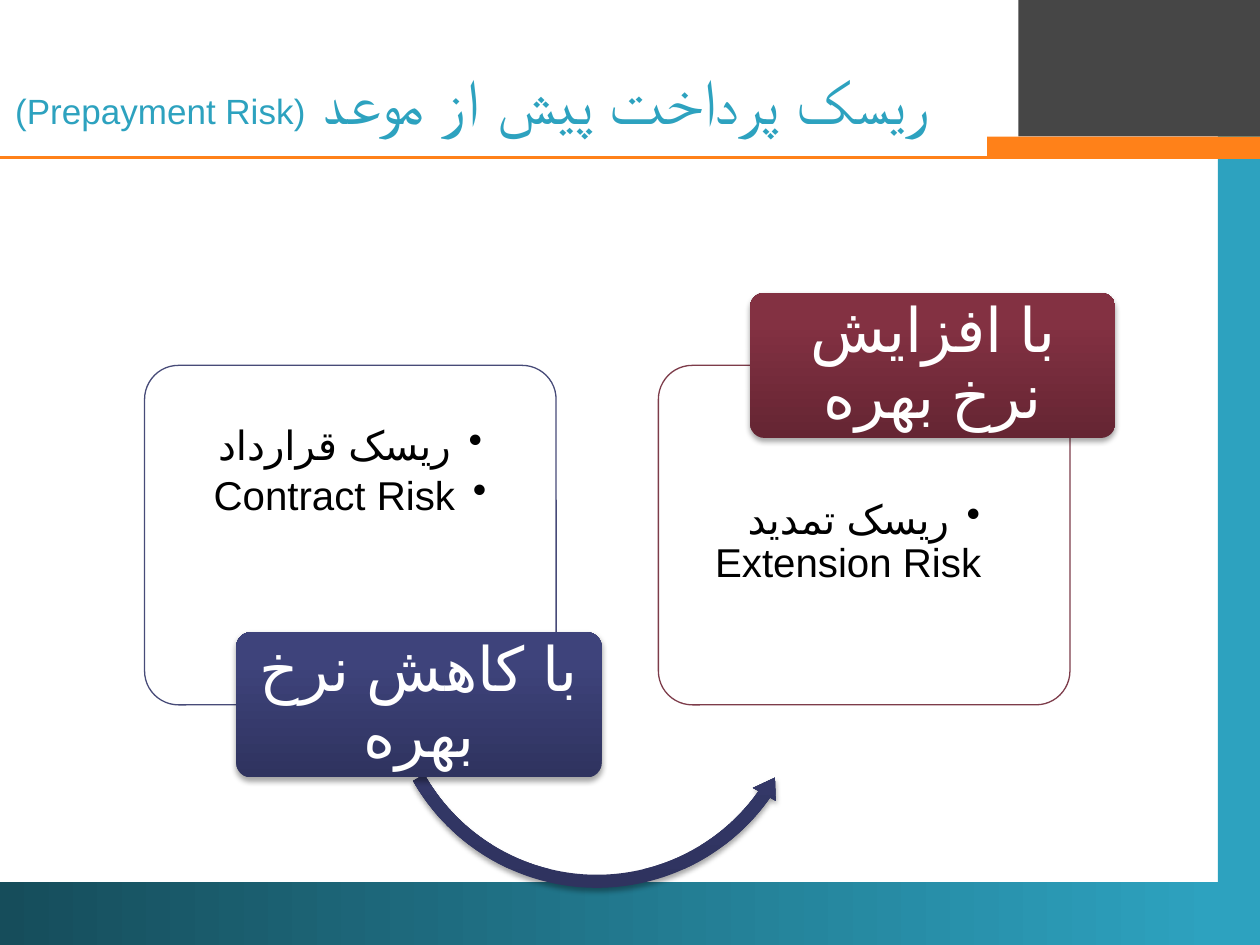
from lxml.etree import SubElement
from pptx import Presentation
from pptx.dml.color import RGBColor
from pptx.enum.shapes import MSO_CONNECTOR, MSO_SHAPE
from pptx.enum.text import MSO_ANCHOR, MSO_AUTO_SIZE, PP_ALIGN
from pptx.oxml.ns import qn
from pptx.util import Pt

FONT = "Arial"
TEAL, DARK_TEAL, ORANGE, GREY = "2DA2BF", "164D5B", "FF8119", "464646"
NAVY = [(0, "2F335F"), (80, "3E437B"), (100, "3D427D")]
MAROON = [(0, "652533"), (80, "833142"), (100, "852F42")]
CARD_SIZE = (235.2, 194)
TAG_SIZE = (208.8, 83)


def color(value):
    return RGBColor.from_string(value)


def add_box(slide, kind, box, fill, line=None):
    """Add a shape; fill is a hex string or a list of gradient stops."""
    shape = slide.shapes.add_shape(kind, *(Pt(length) for length in box))
    shape.shadow.inherit = False
    if isinstance(fill, str):
        shape.fill.solid()
        shape.fill.fore_color.rgb = color(fill)
    else:
        shape.fill.gradient()
        stops = shape._element.spPr.find(".//" + qn("a:gsLst"))
        stops.clear()
        for position, value in fill:
            stop = SubElement(stops, qn("a:gs"), pos=str(position * 1000))
            SubElement(stop, qn("a:srgbClr"), val=value)
    if line:
        shape.line.color.rgb = color(line)
        shape.line.width = Pt(0.75)
    else:
        shape.line.fill.background()
    return shape


def add_soft_shadow(shape):
    effects = shape._element.spPr.find(qn("a:effectLst"))
    shadow = SubElement(effects, qn("a:outerShdw"), blurRad=str(Pt(3.1)),
                        dist=str(Pt(1.8)), dir="5400000", rotWithShape="0")
    shade = SubElement(shadow, qn("a:srgbClr"), val="000000")
    SubElement(shade, qn("a:alpha"), val="35000")


def format_paragraph(paragraph, size, value, language=None):
    """Centre a right-to-left paragraph and format its runs."""
    paragraph.alignment = PP_ALIGN.CENTER
    paragraph._p.get_or_add_pPr().set("rtl", "1")
    for run in paragraph.runs:
        run.font.name = FONT
        run.font.size = Pt(size)
        run.font.color.rgb = color(value)
        properties = run._r.get_or_add_rPr()
        SubElement(properties, qn("a:cs"), typeface=FONT)
        if language:
            properties.set("lang", language)


def set_margins(frame, horizontal, top, bottom):
    frame.word_wrap = True
    frame.margin_left = frame.margin_right = Pt(horizontal)
    frame.margin_top, frame.margin_bottom = Pt(top), Pt(bottom)


def add_frame(slide, width, height):
    """Bars and rule around the edge of the slide."""
    add_box(slide, MSO_SHAPE.RECTANGLE, (width - 24, 18, 24, height - 18), TEAL)
    bottom = add_box(slide, MSO_SHAPE.RECTANGLE, (0, height - 36, width - 24, 36),
                     [(0, DARK_TEAL), (100, TEAL)])
    bottom.fill.gradient_angle = 0
    add_box(slide, MSO_SHAPE.RECTANGLE, (width - 138, 0, 138, 78), GREY)
    rule = slide.shapes.add_connector(MSO_CONNECTOR.STRAIGHT,
                                      Pt(width), Pt(90), Pt(0), Pt(90))
    rule.line.color.rgb = color(ORANGE)
    rule.line.width = Pt(2.25)
    SubElement(rule._element.spPr, qn("a:effectLst"))
    add_box(slide, MSO_SHAPE.RECTANGLE, (width - 156, 78, 156, 12), ORANGE)


def place_title(slide, box):
    title = slide.shapes.title
    title.left, title.top, title.width, title.height = (Pt(length) for length in box)
    frame = title.text_frame
    frame.auto_size = MSO_AUTO_SIZE.NONE
    frame.word_wrap = True
    frame.vertical_anchor = MSO_ANCHOR.MIDDLE
    paragraph = frame.paragraphs[0]
    paragraph.text = "ریسک پرداخت پیش از موعد "
    paragraph.add_run().text = "(Prepayment Risk)"
    format_paragraph(paragraph, 36, TEAL)
    paragraph.runs[1].font.size = Pt(20)


def add_card(slide, box, lines, line_color, text_top):
    """Outlined card with a bulleted list."""
    card = add_box(slide, MSO_SHAPE.ROUNDED_RECTANGLE, box, "FFFFFF", line_color)
    card.adjustments[0] = 0.1
    frame = card.text_frame
    set_margins(frame, 0, text_top, 0)
    frame.vertical_anchor = MSO_ANCHOR.TOP
    frame.text = "\n".join(lines)
    for paragraph in frame.paragraphs:
        format_paragraph(paragraph, 23, "000000", "fa-IR")
        paragraph.level = 1
        paragraph.line_spacing = 0.9
        paragraph.space_after = Pt(3.5)
        properties = paragraph._p.pPr
        properties.set("marL", str(Pt(18)))
        properties.set("indent", str(-Pt(18)))
        SubElement(properties, qn("a:buChar"), char="•")


def add_tag(slide, box, text, stops):
    """Gradient label that straddles a card's edge."""
    tag = add_box(slide, MSO_SHAPE.ROUNDED_RECTANGLE, box, stops)
    tag.adjustments[0] = 0.1
    tag.fill.gradient_angle = 90
    add_soft_shadow(tag)
    frame = tag.text_frame
    set_margins(frame, 2.6, 1.2, 1.2)
    frame.vertical_anchor = MSO_ANCHOR.MIDDLE
    frame.text = text
    format_paragraph(frame.paragraphs[0], 35, "FFFFFF", "fa-IR")
    frame.paragraphs[0].line_spacing = 0.9


def add_arrow(slide, box):
    """Curved arrow from the first card towards the second."""
    arrow = add_box(slide, MSO_SHAPE.LEFT_CIRCULAR_ARROW, box, NAVY)
    arrow.fill.gradient_angle = 90
    add_soft_shadow(arrow)
    degree = 0.6  # one degree in adjustment units
    values = (0.03, 5.55 * degree, 35.15 * degree, 150.4 * degree, 0.03)
    for index, value in enumerate(values):
        arrow.adjustments[index] = value


def add_process(slide, box):
    """Two cards side by side, joined by the arrow."""
    left, top, width, _ = box
    card_width, card_height = CARD_SIZE
    tag_width, tag_height = TAG_SIZE
    tag_shift = 52.4
    right = left + width - tag_shift - tag_width

    add_card(slide, (left, top, *CARD_SIZE),
             ["ریسک قرارداد", "Contract Risk"], "474B78", 29)
    add_arrow(slide, (left + 134, top + 53.3, 249, 249))
    add_tag(slide, (left + tag_shift, top + card_height - tag_height / 2, *TAG_SIZE),
            "با کاهش نرخ بهره", NAVY)

    add_card(slide, (right, top, *CARD_SIZE),
             ["ریسک تمدید Extension Risk"], "7D3C4A", 71)
    add_tag(slide, (right + tag_shift, top - tag_height / 2, *TAG_SIZE),
            "با افزایش نرخ بهره", MAROON)


def main():
    presentation = Presentation()
    width, height = 720, 540
    presentation.slide_width, presentation.slide_height = Pt(width), Pt(height)
    slide = presentation.slides.add_slide(presentation.slide_layouts[5])
    add_frame(slide, width, height)
    place_title(slide, (0, 36, 540, 42))
    add_process(slide, (82.6, 208.8, 554.8, CARD_SIZE[1]))
    presentation.save("out.pptx")


if __name__ == "__main__":
    main()
